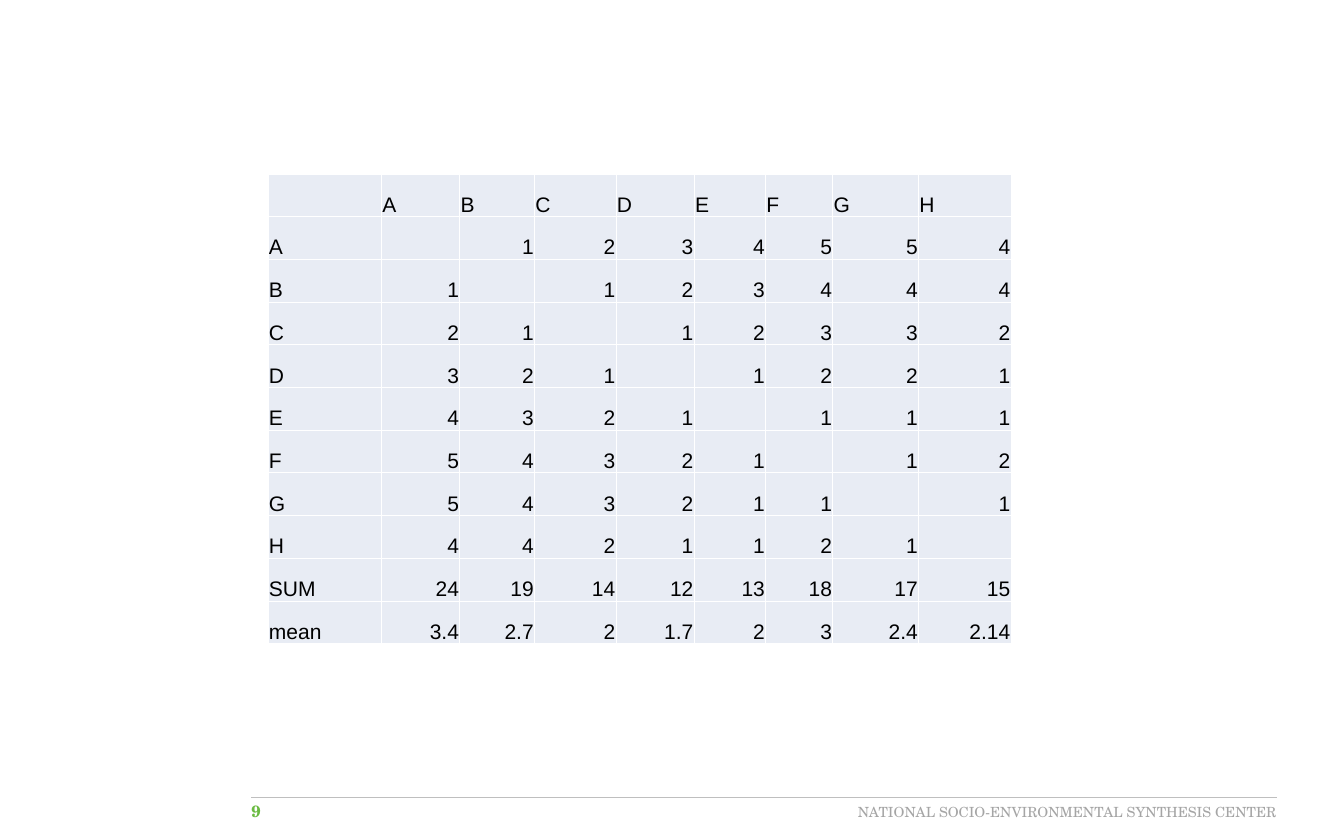
from lxml import etree
from pptx import Presentation
from pptx.dml.color import RGBColor
from pptx.enum import shapes, text
from pptx.oxml import ns
from pptx.util import Inches, Pt

BLACK = RGBColor(0x00, 0x00, 0x00)
CELL_BLUE = RGBColor(0xE8, 0xEC, 0xF4)
PAGE_GREEN = RGBColor(0x6B, 0xBB, 0x42)
FOOTER_GRAY = RGBColor(0xA5, 0xA5, 0xA5)
RULE_GRAY = RGBColor(0xBF, 0xBF, 0xBF)
BORDER_WHITE = RGBColor(0xFF, 0xFF, 0xFF)

FOOTER_FONT = "TeX Gyre Schola"
TABLE_FONT = "Arial"

COLUMN_WIDTHS = [1.35, 0.93, 0.89, 0.97, 0.93, 0.85, 0.8, 1.02, 1.1]
DISTANCES = [
    ["", "A", "B", "C", "D", "E", "F", "G", "H"],
    ["A", "", "1", "2", "3", "4", "5", "5", "4"],
    ["B", "1", "", "1", "2", "3", "4", "4", "4"],
    ["C", "2", "1", "", "1", "2", "3", "3", "2"],
    ["D", "3", "2", "1", "", "1", "2", "2", "1"],
    ["E", "4", "3", "2", "1", "", "1", "1", "1"],
    ["F", "5", "4", "3", "2", "1", "", "1", "2"],
    ["G", "5", "4", "3", "2", "1", "1", "", "1"],
    ["H", "4", "4", "2", "1", "1", "2", "1", ""],
    ["SUM", "24", "19", "14", "12", "13", "18", "17", "15"],
    ["mean", "3.4", "2.7", "2", "1.7", "2", "3", "2.4", "2.14"],
]


def style_text(paragraph, font_name, size, color, align, bold=False):
    paragraph.alignment = align
    for run in paragraph.runs:
        run.font.name = font_name
        run.font.size = Pt(size)
        run.font.color.rgb = color
        run.font.bold = bold


def add_label(slide, wording, left, top, width, height, **style):
    label = slide.shapes.add_textbox(
        Inches(left), Inches(top), Inches(width), Inches(height))
    frame = label.text_frame
    frame.word_wrap = True
    frame.margin_left = frame.margin_right = frame.margin_bottom = 0
    frame.margin_top = Inches(0.05)
    frame.text = wording
    style_text(frame.paragraphs[0], FOOTER_FONT, **style)


def add_rule(slide, left, right, y):
    rule = slide.shapes.add_connector(
        shapes.MSO_CONNECTOR.STRAIGHT,
        Inches(left), Inches(y), Inches(right), Inches(y))
    rule.line.color.rgb = RULE_GRAY
    rule.line.width = Pt(0.75)
    etree.SubElement(rule._element.spPr, ns.qn("a:effectLst"))


def add_borders(cell):
    properties = cell._tc.get_or_add_tcPr()
    for side in ("a:lnL", "a:lnR", "a:lnT", "a:lnB"):
        border = etree.SubElement(properties, ns.qn(side), w=str(Pt(1)))
        fill = etree.SubElement(border, ns.qn("a:solidFill"))
        etree.SubElement(fill, ns.qn("a:srgbClr"), val=str(BORDER_WHITE))


def fill_cell(cell, value):
    add_borders(cell)
    cell.fill.solid()
    cell.fill.fore_color.rgb = CELL_BLUE
    cell.margin_left = cell.margin_right = cell.margin_top = Inches(0.01)
    cell.margin_bottom = 0
    cell.vertical_anchor = text.MSO_ANCHOR.BOTTOM
    cell.text = value
    # Numbers sit right, names sit left
    align = text.PP_ALIGN.RIGHT if value[:1].isdigit() else text.PP_ALIGN.LEFT
    style_text(cell.text_frame.paragraphs[0], TABLE_FONT, 18, BLACK, align)


def add_distance_table(slide):
    table = slide.shapes.add_table(
        len(DISTANCES), len(COLUMN_WIDTHS),
        Inches(3.19), Inches(2.07), Inches(8.84), Inches(5.59)).table
    table.first_row = table.horz_banding = False
    for column, width in zip(table.columns, COLUMN_WIDTHS):
        column.width = Inches(width)
    for row, values in zip(table.rows, DISTANCES):
        for cell, value in zip(row.cells, values):
            fill_cell(cell, value)


def main():
    prs = Presentation()
    prs.slide_width, prs.slide_height = Inches(15.99), Inches(9.99)
    slide = prs.slides.add_slide(prs.slide_layouts[6])

    # Footer: page number, centre name and rule
    add_label(slide, "9", 2.99, 9.48, 0.58, 0.29, size=14,
              color=PAGE_GREEN, align=text.PP_ALIGN.LEFT, bold=True)
    add_label(slide, "NATIONAL SOCIO-ENVIRONMENTAL SYNTHESIS CENTER",
              10.14, 9.51, 5.05, 0.3, size=12,
              color=FOOTER_GRAY, align=text.PP_ALIGN.RIGHT)
    add_rule(slide, 2.99, 15.19, 9.48)

    # Distances between nodes, with sums and means
    add_distance_table(slide)

    prs.save("out.pptx")


if __name__ == "__main__":
    main()
